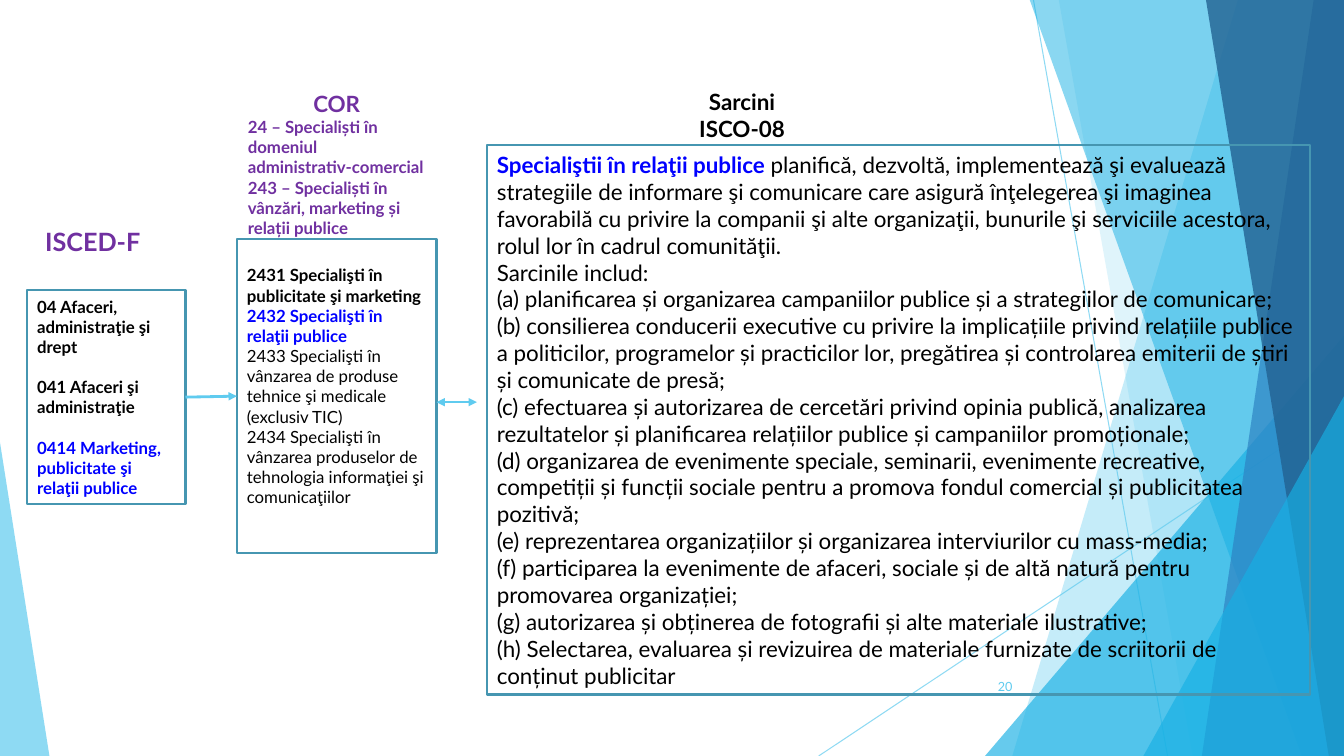
import pptx
import pptx.util
import pptx.dml.color
import pptx.enum.shapes
import pptx.enum.text
import pptx.oxml
import pptx.oxml.ns
from dataclasses import dataclass
from pptx.util import Inches

ALIGN = pptx.enum.text.PP_ALIGN
SHAPE = pptx.enum.shapes.MSO_SHAPE


@dataclass(frozen=True)
class Theme:
    """Colours, font and type sizes of the slide."""
    font: str = "Lato"
    black: str = "000000"
    white: str = "FFFFFF"
    highlight: str = "0000FF"
    purple: str = "7030A0"
    border: str = "4696B1"
    sky: str = "5FCBEF"
    cyan: str = "17B0E4"
    blue: str = "2E83C3"
    navy: str = "226292"
    number: int = 9
    small: int = 12
    body: int = 16
    title: int = 18


def rgb(colour):
    """Turn a hex string into a colour."""
    return pptx.dml.color.RGBColor.from_string(colour)


def add_element(parent, tag, **attributes):
    """Append a drawing element to an XML parent."""
    element = pptx.oxml.parse_xml(f"<a:{tag} {pptx.oxml.ns.nsdecls('a')}/>")
    for name, value in attributes.items():
        element.set(name, str(value))
    parent.append(element)


def set_opacity(properties, percent):
    """Make the first solid colour below the properties translucent."""
    colour = next(properties.iter(pptx.oxml.ns.qn("a:srgbClr")))
    add_element(colour, "alpha", val=percent * 1000)


def write(paragraph, text, *, font, size, colour, bold=False):
    """Add a formatted run to a paragraph."""
    run = paragraph.add_run()
    run.text = text
    run.font.name = font
    run.font.size = pptx.util.Pt(size)
    run.font.bold = bold
    run.font.color.rgb = rgb(colour)


class SlideBuilder:
    """Draws elements on one slide in one style."""

    def __init__(self, slide, theme):
        """Keep the slide and its theme."""
        self.slide = slide
        self.shapes = slide.shapes
        self.theme = theme

    def paint(self, shape, fill=None, opacity=100, border=None):
        """Set fill, outline and shadow of a shape."""
        shape.shadow.inherit = False
        if fill:
            shape.fill.solid()
            shape.fill.fore_color.rgb = rgb(fill)
            set_opacity(shape.fill._xPr, opacity)
        else:
            shape.fill.background()
        if border:
            shape.line.color.rgb = rgb(border)
            shape.line.width = pptx.util.Pt(1.5)
        else:
            shape.line.fill.background()

    def facet(self, points, fill, opacity):
        """Draw a translucent polygon."""
        corners = [(Inches(x), Inches(y)) for x, y in points]
        builder = self.shapes.build_freeform(*corners[0])
        builder.add_line_segments(corners[1:], close=True)
        self.paint(builder.convert_to_shape(), fill, opacity)

    def triangle(self, bounds, apex, fill, opacity):
        """Draw a translucent triangle with its apex at a share of the width."""
        shape = self.shapes.add_shape(SHAPE.ISOSCELES_TRIANGLE, *map(Inches, bounds))
        shape.adjustments[0] = apex
        self.paint(shape, fill, opacity)

    def line(self, start, end, width, opacity=100, heads=()):
        """Draw a straight line, with arrowheads if named."""
        connector = self.shapes.add_connector(
            pptx.enum.shapes.MSO_CONNECTOR.STRAIGHT, *map(Inches, (*start, *end)))
        connector.line.color.rgb = rgb(self.theme.sky)
        connector.line.width = pptx.util.Pt(width)
        properties = connector._element.spPr
        set_opacity(properties, opacity)
        for head in heads:
            add_element(connector.line._ln, head, type="triangle")
        add_element(properties, "effectLst")
        return connector

    def fill_text(self, shape, paragraphs, size, align=ALIGN.LEFT, gap=0):
        """Write paragraphs given as lists of (text, format) runs."""
        frame = shape.text_frame
        frame.word_wrap = True
        frame.vertical_anchor = pptx.enum.text.MSO_ANCHOR.MIDDLE
        for index, runs in enumerate(paragraphs):
            paragraph = frame.add_paragraph() if index else frame.paragraphs[0]
            paragraph.alignment = align
            if index and gap:
                paragraph.space_before = pptx.util.Pt(gap)
            for text, style in runs:
                write(paragraph, text, **{"font": self.theme.font, "size": size,
                                          "colour": self.theme.black, **style})
        return shape

    def label(self, bounds, paragraphs, size, align):
        """Add a text box."""
        shape = self.shapes.add_textbox(*map(Inches, bounds))
        return self.fill_text(shape, paragraphs, size, align)

    def box(self, bounds, paragraphs, size, gap=0, **style):
        """Add a rectangle with text."""
        shape = self.shapes.add_shape(SHAPE.RECTANGLE, *map(Inches, bounds))
        self.paint(shape, **style)
        return self.fill_text(shape, paragraphs, size, gap=gap)


def draw_background(builder):
    """Draw the faceted decoration at the slide's edges."""
    theme = builder.theme
    top, bottom, right = -0.01, 7.5, 13.33
    builder.line((10.25, 0), (11.58, bottom), 0.75, 70)
    builder.line((right, 4.03), (8.12, bottom), 0.75, 70)

    def edge_facet(top_left, bottom_left, fill, opacity):
        """Draw a facet reaching the right edge."""
        builder.facet([(top_left, top), (right, top), (right, bottom),
                       (bottom_left, bottom)], fill, opacity)

    edge_facet(12.28, 10.04, theme.sky, 36)
    edge_facet(10.5, 11.83, theme.sky, 20)
    builder.triangle((9.77, 3.33, 3.56, 4.17), 1, theme.cyan, 66)
    edge_facet(10.21, 12.91, theme.cyan, 50)
    edge_facet(13.03, 11.92, theme.blue, 70)
    edge_facet(11.96, 13.18, theme.navy, 80)
    builder.triangle((11.34, 3.93, 1.99, 3.57), 1, theme.cyan, 66)
    builder.triangle((0, 4.39, 0.49, 3.11), 0, theme.sky, 70)


def draw_content(builder):
    """Draw the three classification columns and their links."""
    theme = builder.theme
    bold = {"bold": True}
    marked = {"bold": True, "colour": theme.highlight}
    heading = {"bold": True, "colour": theme.purple}

    builder.label((9.39, 6.61, 0.75, 0.4), [[("20", {"colour": theme.sky})]],
                  theme.number, ALIGN.RIGHT)
    isced_box = builder.box((0.27, 2.88, 1.57, 2.12), [
        [("04 Afaceri, administraţie şi drept", bold)],
        [("041 Afaceri şi administraţie", bold)],
        [("0414 Marketing, publicitate şi relaţii publice", marked)],
    ], theme.small, gap=14.4, border=theme.border)

    tasks = [
        "Sarcinile includ:",
        "(a) planificarea și organizarea campaniilor publice și a strategiilor de comunicare;",
        "(b) consilierea conducerii executive cu privire la implicațiile privind relațiile publice a politicilor, programelor și practicilor lor, pregătirea și controlarea emiterii de știri și comunicate de presă;",
        "(c) efectuarea și autorizarea de cercetări privind opinia publică, analizarea rezultatelor și planificarea relațiilor publice și campaniilor promoționale;",
        "(d) organizarea de evenimente speciale, seminarii, evenimente recreative, competiții și funcții sociale pentru a promova fondul comercial și publicitatea pozitivă;",
        "(e) reprezentarea organizațiilor și organizarea interviurilor cu mass-media;",
        "(f) participarea la evenimente de afaceri, sociale și de altă natură pentru promovarea organizației;",
        "(g) autorizarea și obținerea de fotografii și alte materiale ilustrative;",
        "(h) Selectarea, evaluarea și revizuirea de materiale furnizate de scriitorii de conținut publicitar",
    ]
    introduction = [
        ("Specialiştii în relaţii publice ", marked),
        ("planifică, dezvoltă, implementează şi evaluează strategiile de informare şi comunicare care asigură înţelegerea şi imaginea favorabilă cu privire la companii şi alte organizaţii, bunurile şi serviciile acestora, rolul lor în cadrul comunităţii.", {}),
    ]
    builder.box((4.83, 1.44, 8.16, 5.45), [introduction] + [[(task, {})] for task in tasks],
                theme.body, border=theme.border)

    cor_box = builder.box((2.35, 2.37, 1.98, 3.12), [
        [("2431 Specialişti în publicitate şi marketing", bold)],
        [("2432 Specialişti în relaţii publice", marked)],
        [("2433 Specialişti în vânzarea de produse tehnice şi medicale (exclusiv TIC)", {})],
        [("2434 Specialişti în vânzarea produselor de tehnologia informaţiei şi comunicaţiilor", {})],
    ], theme.small, border=theme.border)
    cor_box.text_frame.margin_bottom = Inches(0.25)

    link = builder.line((1.84, 3.94), (2.35, 3.94), 0, heads=["tailEnd"])
    link.begin_connect(isced_box, 3)
    link.end_connect(cor_box, 1)
    builder.label((0.27, 2.1, 1.3, 0.59), [[("ISCED-F", heading)]], theme.title, ALIGN.CENTER)
    builder.label((6.38, 0.85, 1.96, 0.59), [[("Sarcini", bold)], [("ISCO-08", bold)]],
                  theme.body, ALIGN.CENTER)
    builder.line((4.33, 3.99), (4.73, 3.99), 1, heads=["headEnd", "tailEnd"])
    cor_heading = builder.box((2.36, 0.98, 1.96, 1.29), [
        [("COR", {**heading, "size": theme.body})],
        [("24 – Specialiști în domeniul administrativ-comercial", heading)],
        [("243 – Specialiști în vânzări, marketing și relații publice", heading)],
    ], theme.small, fill=theme.white)
    cor_heading.text_frame.paragraphs[0].alignment = ALIGN.CENTER


def main():
    """Build and save the presentation."""
    presentation = pptx.Presentation()
    presentation.slide_width = Inches(13.33)
    presentation.slide_height = Inches(7.5)
    slide = presentation.slides.add_slide(presentation.slide_layouts[6])
    builder = SlideBuilder(slide, Theme())
    draw_background(builder)
    draw_content(builder)
    presentation.save("out.pptx")


if __name__ == "__main__":
    main()
